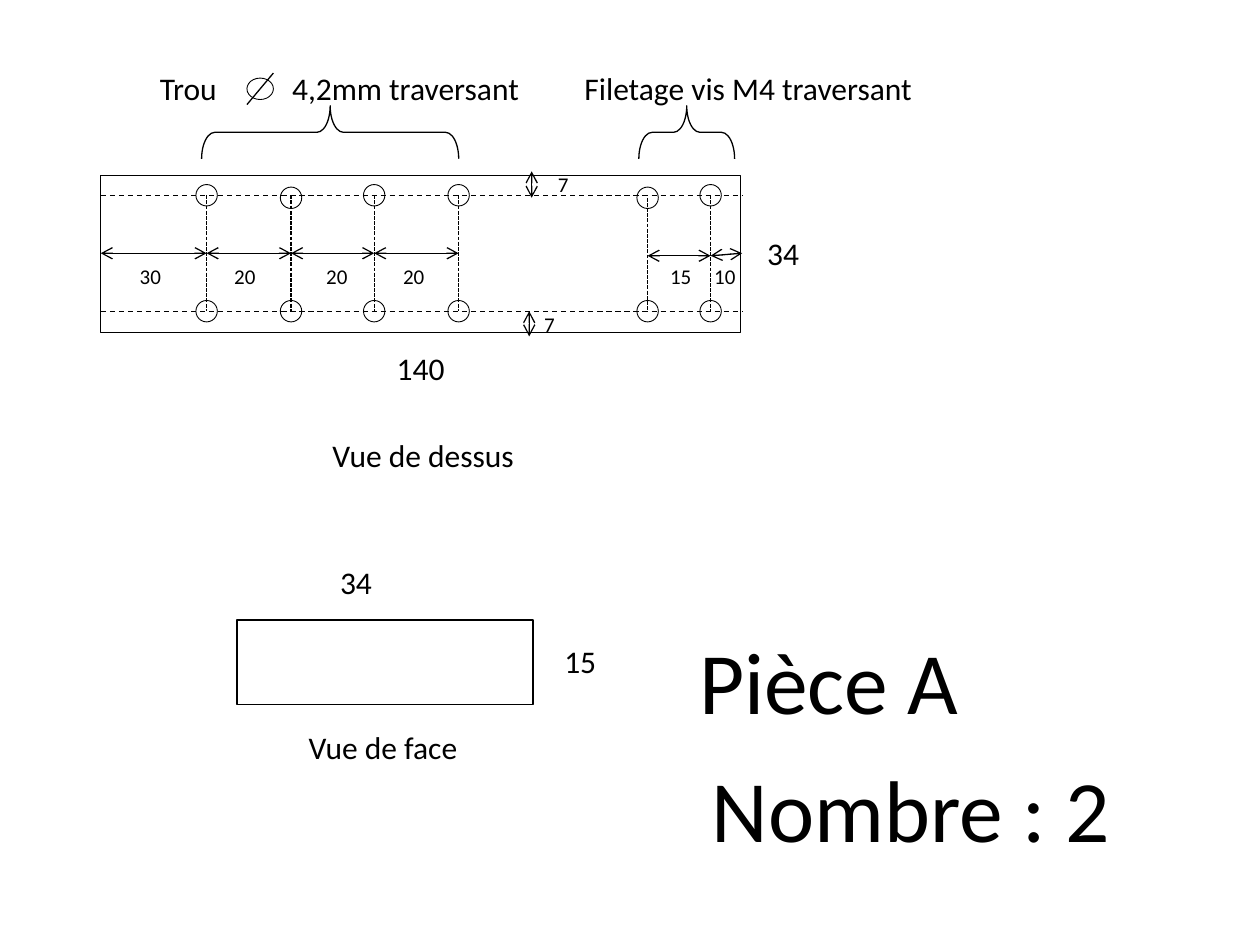
import pptx
import pptx.dml.color
import pptx.enum.dml
import pptx.enum.shapes
import pptx.enum.text
import pptx.oxml
import pptx.oxml.ns
import pptx.util

Inches = pptx.util.Inches
Shape = pptx.enum.shapes.MSO_SHAPE
Dash = pptx.enum.dml.MSO_LINE

BLACK, WHITE = "000000", "FFFFFF"
LABEL_FRAME = {
    "word_wrap": True,
    "auto_size": pptx.enum.text.MSO_AUTO_SIZE.SHAPE_TO_FIT_TEXT,
}

PLATE_LEFT, PLATE_RIGHT = 0.8, 5.89
ROW_TOP, ROW_BOTTOM = 1.55, 2.47
DIMENSION_Y = 2.01
HOLE_SIZE = 0.17
PLAIN_HOLES = [round(1.64 + i * 2 / 3, 2) for i in range(4)]
THREADED_HOLES = [5.14, 5.64]
# The second plain hole and the first threaded one sit slightly lower.
LOW_HOLES = (PLAIN_HOLES[1], THREADED_HOLES[0])


def color(hex_value):
    return pptx.dml.color.RGBColor.from_string(hex_value)


def set_attributes(target, values):
    for name, value in values.items():
        setattr(target, name, value)


def add_outline(parent, preset, left, top, width, height, weight=0.5, fill=None):
    shape = parent.add_shape(
        preset, Inches(left), Inches(top), Inches(width), Inches(height))
    shape.shadow.inherit = False
    if fill:
        shape.fill.solid()
        shape.fill.fore_color.rgb = color(fill)
    else:
        shape.fill.background()
    shape.line.color.rgb = color(BLACK)
    shape.line.width = pptx.util.Pt(weight)
    return shape


def add_line(parent, start, end, dash=None):
    line = parent.add_connector(
        pptx.enum.shapes.MSO_CONNECTOR.STRAIGHT,
        *(Inches(value) for value in (*start, *end)))
    line.line.color.rgb = color(BLACK)
    line.line.width = pptx.util.Pt(0.75)
    if dash:
        line.line.dash_style = dash
    properties = line._element.spPr
    properties.append(pptx.oxml.parse_xml(
        f"<a:effectLst {pptx.oxml.ns.nsdecls('a')}/>"))
    return line


def add_dimension(parent, start, end):
    """Draw a measuring line with an open arrow at both ends."""
    outline = add_line(parent, start, end).line._get_or_add_ln()
    for tag in ("headEnd", "tailEnd"):
        outline.append(pptx.oxml.parse_xml(
            f'<a:{tag} {pptx.oxml.ns.nsdecls("a")} type="arrow"/>'))


def add_label(parent, text, left, top, width, height=0.4, size=18):
    label = parent.add_textbox(
        Inches(left), Inches(top), Inches(width), Inches(height))
    set_attributes(label.text_frame, LABEL_FRAME)
    run = label.text_frame.paragraphs[0].add_run()
    run.text = text
    set_attributes(run.font, {"name": "Calibri", "size": pptx.util.Pt(size)})
    run.font.color.rgb = color(BLACK)


def add_brace(parent, left, top, width, height):
    brace = add_outline(
        parent, Shape.LEFT_BRACE, left, top, width, height, weight=0.75)
    brace.rotation = 90
    brace.adjustments[0] = 0.25
    brace.adjustments[1] = 0.5


def add_holes(parent):
    for x in PLAIN_HOLES + THREADED_HOLES:
        top_center = ROW_TOP + (0.02 if x in LOW_HOLES else 0)
        for y in (top_center, ROW_BOTTOM):
            add_outline(parent, Shape.OVAL, x - HOLE_SIZE / 2,
                        y - HOLE_SIZE / 2, HOLE_SIZE, HOLE_SIZE)
        axis_top = ROW_TOP if x in PLAIN_HOLES else top_center
        add_line(parent, (x, axis_top), (x, ROW_BOTTOM), Dash.SQUARE_DOT)


def add_dimensions(parent):
    stops = [PLATE_LEFT] + PLAIN_HOLES
    for start, end in zip(stops, stops[1:]):
        add_dimension(parent, (start, DIMENSION_Y), (end, DIMENSION_Y))
    first, last = THREADED_HOLES
    add_dimension(parent, (first, 2.03), (last, 2.03))
    add_dimension(parent, (last, 2.03), (PLATE_RIGHT, DIMENSION_Y))
    add_dimension(parent, (4.22, 1.36), (4.22, 1.57))
    add_dimension(parent, (4.2, ROW_BOTTOM), (4.2, 2.67))

    for text, left, top in [
        ("30", 1.01, 2.04), ("20", 1.76, 2.04), ("20", 2.49, 2.04),
        ("20", 3.1, 2.04), ("15", 5.22, 2.04), ("10", 5.57, 2.04),
        ("7", 4.33, 1.31), ("7", 4.22, 2.42),
    ]:
        add_label(parent, text, left, top, 0.42, 0.3, size=12)
    add_label(parent, "140", 3.05, 2.72, 0.81)
    add_label(parent, "34", 5.99, 1.81, 0.81)


def add_top_view(slide):
    plate = slide.shapes.add_group_shape().shapes
    add_outline(plate, Shape.RECTANGLE, PLATE_LEFT, 1.39, 5.08, 1.25, fill=WHITE)
    for y in (ROW_TOP, ROW_BOTTOM):
        add_line(plate, (PLATE_LEFT, y), (PLATE_RIGHT, y), Dash.DASH)
    add_holes(plate)
    add_dimensions(plate)
    add_brace(plate, 2.41, 0.03, 0.42, 2.04)
    add_brace(slide.shapes, 5.24, 0.67, 0.42, 0.76)

    hole_note = slide.shapes.add_group_shape().shapes
    add_label(hole_note, "Trou", 1.17, 0.5, 1.13)
    add_outline(hole_note, Shape.OVAL, 1.96, 0.62, 0.21, 0.17)
    add_line(hole_note, (2.17, 0.58), (1.96, 0.83))
    add_label(hole_note, "4,2mm traversant", 2.22, 0.5, 2.16, 0.71)

    add_label(slide.shapes, "Filetage vis M4 traversant", 4.54, 0.5, 3.04)
    add_label(slide.shapes, "Vue de dessus", 2.54, 3.41, 3.62)


def add_front_view(slide):
    add_outline(slide.shapes, Shape.RECTANGLE, 1.88, 4.92, 2.35, 0.67, weight=0.75)
    add_label(slide.shapes, "34", 2.6, 4.42, 0.81)
    add_label(slide.shapes, "15", 4.38, 5.05, 0.81)
    add_label(slide.shapes, "Vue de face", 2.35, 5.73, 3.62)


def main():
    deck = pptx.Presentation()
    set_attributes(deck, {"slide_width": Inches(10), "slide_height": Inches(7.5)})
    slide = deck.slides.add_slide(deck.slide_layouts[6])
    add_top_view(slide)
    add_front_view(slide)
    add_label(slide.shapes, "Pièce A", 5.45, 4.93, 4.45, 0.94, size=50)
    add_label(slide.shapes, "Nombre : 2", 5.55, 5.94, 4.45, 0.94, size=50)
    deck.save("out.pptx")


if __name__ == "__main__":
    main()
